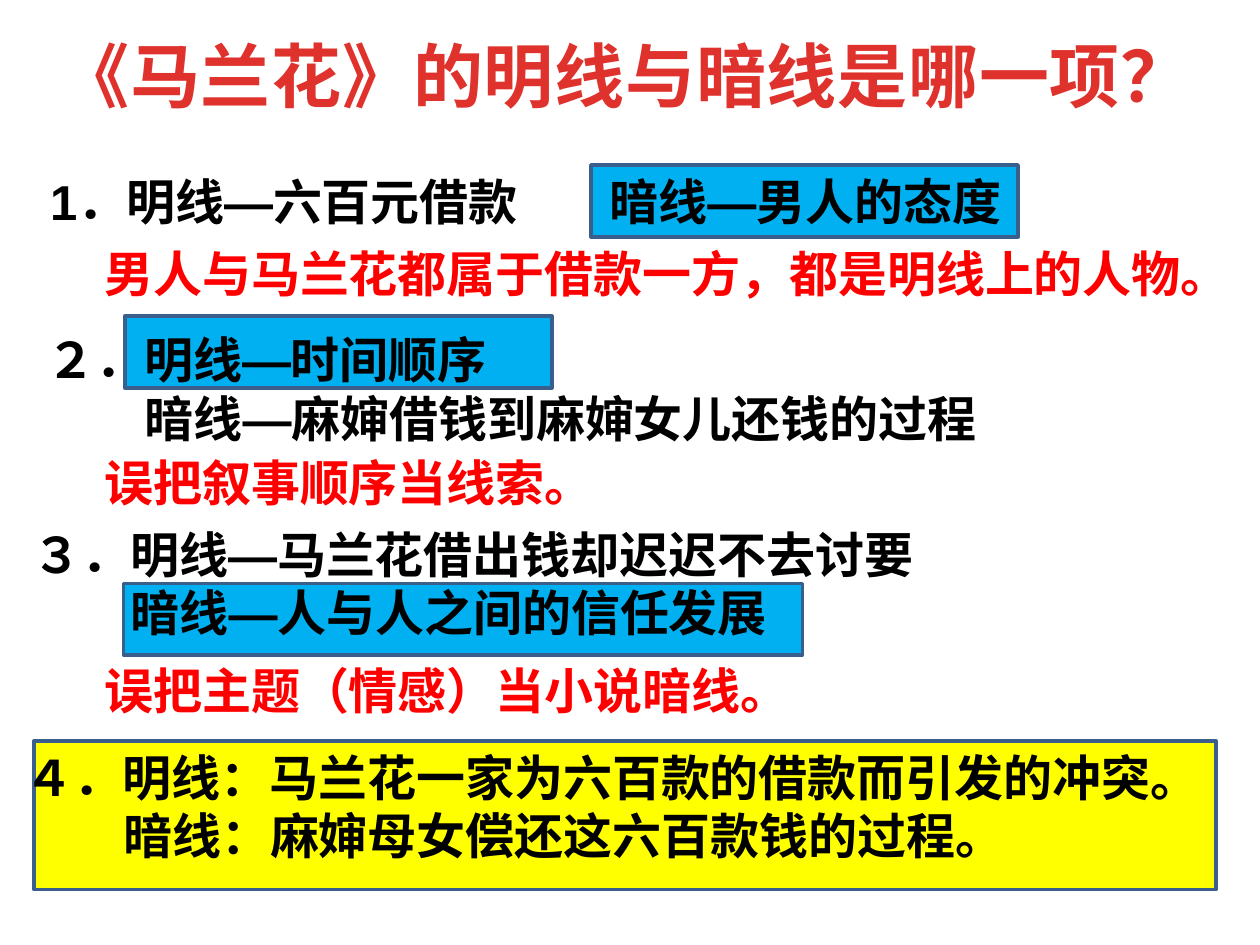
import collections

import lxml.etree
import pptx
import pptx.dml.color
import pptx.enum.dml
import pptx.enum.shapes
import pptx.enum.text
import pptx.oxml.ns
import pptx.util

Box = collections.namedtuple("Box", "left top width height")
Option = collections.namedtuple("Option", "box lines highlight color note_box note")

SLIDE_WIDTH = pptx.util.Inches(10)
SLIDE_HEIGHT = pptx.util.Inches(7.5)
COLUMN = SLIDE_WIDTH / 100
ROW = SLIDE_HEIGHT / 75
HANGING = 7.8
SECOND_CLUE = 44.4

BLACK = pptx.dml.color.RGBColor(0x00, 0x00, 0x00)
RED = pptx.dml.color.RGBColor(0xFF, 0x00, 0x00)
BLUE = pptx.dml.color.RGBColor(0x00, 0xB0, 0xF0)
YELLOW = pptx.dml.color.RGBColor(0xFF, 0xFF, 0x00)
OUTLINE = pptx.dml.color.RGBColor(0x3A, 0x5F, 0x8C)
TITLE_LIGHT = pptx.dml.color.RGBColor(0xE0, 0x32, 0x2D)
TITLE_DARK = pptx.dml.color.RGBColor(0xA2, 0x20, 0x1C)

OPTIONS = [
    Option(Box(3, 13.1, 94.9, 5.7),
           ["1．明线—六百元借款\t暗线—男人的态度"],
           Box(43.9, 0, 33.9, 5.7), BLUE,
           Box(4.3, 5.7, 88, 5.7), "男人与马兰花都属于借款一方，都是明线上的人物。"),
    Option(Box(2.7, 25.7, 97.2, 10.4),
           ["２．明线—时间顺序", "暗线—麻婶借钱到麻婶女儿还钱的过程"],
           Box(7.2, -0.6, 33.9, 5.7), BLUE,
           Box(4.6, 9.7, 51.4, 5.7), "误把叙事顺序当线索。"),
    Option(Box(1.6, 41.1, 94.8, 10.4),
           ["３．明线—马兰花借出钱却迟迟不去讨要", "暗线—人与人之间的信任发展"],
           Box(8.2, 5.2, 53.9, 5.7), BLUE,
           Box(5.7, 10.8, 67.9, 5.7), "误把主题（情感）当小说暗线。"),
    Option(Box(1, 58.8, 97.4, 13.5),
           ["４．明线：马兰花一家为六百款的借款而引发的冲突。",
            "暗线：麻婶母女偿还这六百款钱的过程。"],
           Box(1.7, 0, 93.8, 11.8), YELLOW, None, None),
]


def within(region, part):
    """Return the part's box moved from region to slide coordinates."""
    return Box(region.left + part.left, region.top + part.top, part.width, part.height)


def emu(box):
    """Convert a box in columns and rows to slide lengths."""
    return (round(box.left * COLUMN), round(box.top * ROW),
            round(box.width * COLUMN), round(box.height * ROW))


def add_lines(slide, box, lines, face, size, color=None):
    """Write bold lines into a text box and return its paragraphs."""
    frame = slide.shapes.add_textbox(*emu(box)).text_frame
    frame.word_wrap = True
    frame.auto_size = pptx.enum.text.MSO_AUTO_SIZE.SHAPE_TO_FIT_TEXT
    frame.text = "\n".join(lines)
    for paragraph in frame.paragraphs:
        font = paragraph.font
        font.name, font.size, font.bold = face, pptx.util.Pt(size), True
        if color is not None:
            font.fill.solid()
            font.fill.fore_color.rgb = color
        defaults = paragraph._p.get_or_add_pPr().get_or_add_defRPr()
        east_asian = lxml.etree.SubElement(defaults, pptx.oxml.ns.qn("a:ea"))
        east_asian.set("typeface", face)
    return frame.paragraphs


def add_question(slide, box):
    """Place the centred question with its red gradient."""
    question, = add_lines(slide, box, ["《马兰花》的明线与暗线是哪一项？"],
                          "Noto Sans CJK JP", 40)
    question.alignment = pptx.enum.text.PP_ALIGN.CENTER
    fill = question.font.fill
    fill.gradient()
    fill.gradient_angle = 270
    for stop, position, color in zip(fill.gradient_stops, (0.25, 1), (TITLE_LIGHT, TITLE_DARK)):
        stop.position = position
        stop.color.rgb = color
    question._p.pPr.get_or_add_defRPr().set("spc", "50")


def add_highlight(slide, box, color):
    """Place an outlined rectangle behind a clue."""
    highlight = slide.shapes.add_shape(pptx.enum.shapes.MSO_SHAPE.RECTANGLE, *emu(box))
    highlight.shadow.inherit = False
    highlight.fill.solid()
    highlight.fill.fore_color.rgb = color
    highlight.line.color.rgb = OUTLINE
    highlight.line.width = pptx.util.Pt(2)


def add_option(slide, option):
    """Place one option with its highlight and the comment below it."""
    add_highlight(slide, within(option.box, option.highlight), option.color)
    first, *others = add_lines(slide, option.box, option.lines, "Arial", 28, BLACK)
    for clue in others:
        clue._p.pPr.set("marL", str(round(HANGING * COLUMN)))
        clue._p.pPr.set("indent", "0")
    if "\t" in option.lines[0]:
        tabs = lxml.etree.Element(pptx.oxml.ns.qn("a:tabLst"))
        lxml.etree.SubElement(tabs, pptx.oxml.ns.qn("a:tab"),
                              pos=str(round(SECOND_CLUE * COLUMN)), algn="l")
        first._p.pPr.insert(0, tabs)
    if option.note:
        add_lines(slide, within(option.box, option.note_box), [option.note],
                  "Noto Sans CJK SC", 28, RED)


def main():
    """Build and save the slide."""
    presentation = pptx.Presentation()
    presentation.slide_width = SLIDE_WIDTH
    presentation.slide_height = SLIDE_HEIGHT
    slide = presentation.slides.add_slide(presentation.slide_layouts[6])
    add_question(slide, Box(1.7, 2.1, 95.9, 7.7))
    for option in OPTIONS:
        add_option(slide, option)
    presentation.save("out.pptx")


if __name__ == "__main__":
    main()
